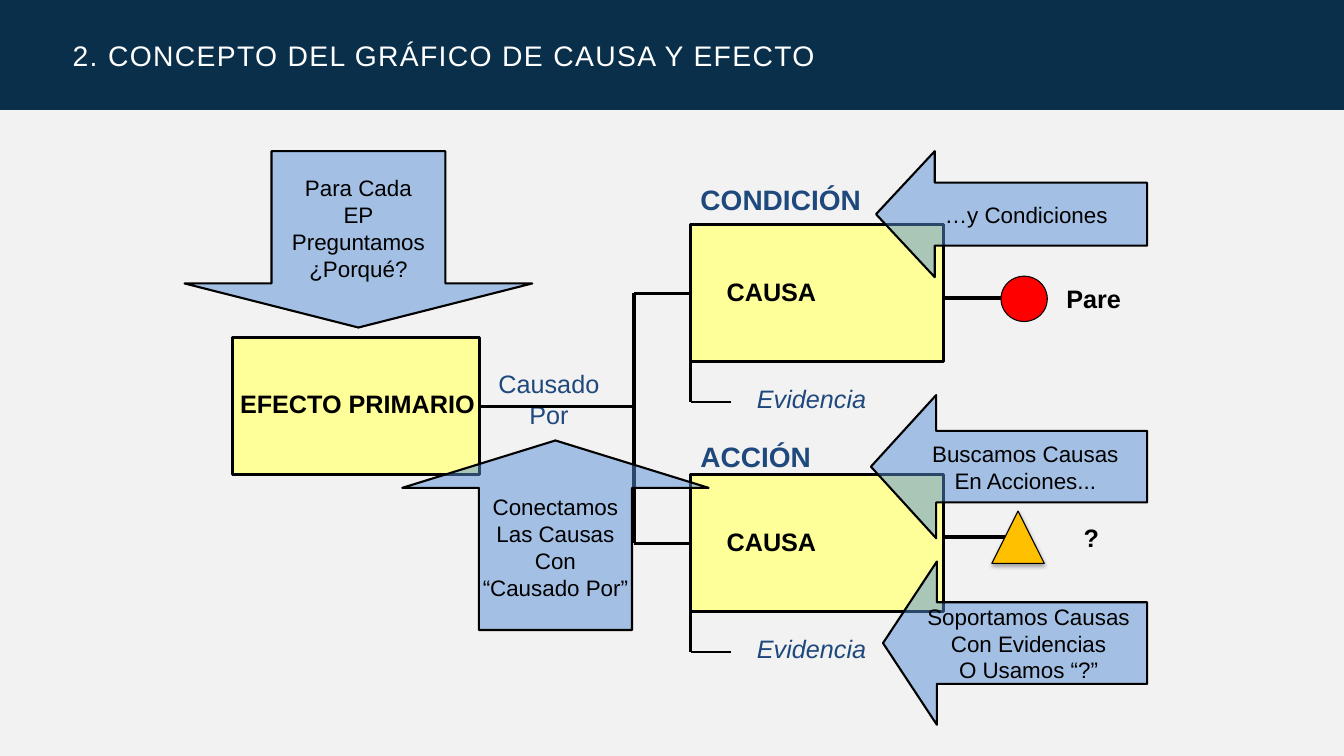
from lxml import etree
from pptx import Presentation, util as u
from pptx.dml.color import RGBColor
from pptx.enum import shapes, text
from pptx.oxml import ns, parse_xml

WIDTH, HEIGHT = u.Inches(13.333), u.Inches(7.5)
NAVY, BLUE, SKY, YELLOW, BLACK = "092F4A", "1F497D", "558ED5", "FFFF99", "000000"

# Horizontal and vertical positions are percentages of the slide's size
CAUSE_LEFT, CAUSE_WIDTH, BOX_HEIGHT = 51.38, 18.83, 18.13
EFFECT = (17.33, 44.67, 18.38, BOX_HEIGHT)
TRUNK_X, LEG = 47.18, 5.33
LINE_HEIGHT = 5.33
ARROW_RIGHT = 85.35

LABEL = {"size": u.Pt(18), "bold": True}
HEADING = {"size": u.Pt(20), "bold": True}
RELATION = {"size": u.Pt(18)}
EVIDENCE = {"size": u.Pt(18), "italic": True}
CALLOUT = {"size": u.Pt(16)}

MSO, ALIGN = shapes.MSO_SHAPE, text.PP_ALIGN


def across(share):
    return round(WIDTH * share / 100)


def down(share):
    return round(HEIGHT * share / 100)


def frame(left, top, width, height):
    return across(left), down(top), across(width), down(height)


def paint(target, colour):
    """Set a fill, line or font colour from a hex string."""
    if hasattr(target, "solid"):
        target.solid()
        target = target.fore_color
    else:
        target = target.color
    target.rgb = RGBColor.from_string(colour)


def write(body, lines, formats, colour=BLACK, align=ALIGN.LEFT):
    for number, line in enumerate(lines):
        paragraph = body.add_paragraph() if number else body.paragraphs[0]
        paragraph.alignment = align
        run = paragraph.add_run()
        run.text = line
        for key, value in {"name": "Arial", **formats}.items():
            setattr(run.font, key, value)
        paint(run.font, colour)


def add_label(slide, wording, box, formats, colour=BLACK, align=ALIGN.LEFT):
    body = slide.shapes.add_textbox(*frame(*box)).text_frame
    body.word_wrap = True
    body.auto_size = text.MSO_AUTO_SIZE.SHAPE_TO_FIT_TEXT
    write(body, [wording], formats, colour, align)


def add_figure(slide, preset, box, fill, weight):
    figure = slide.shapes.add_shape(preset, *frame(*box))
    figure.shadow.inherit = False
    paint(figure.fill, fill)
    if weight:
        paint(figure.line, BLACK)
        figure.line.width = u.Pt(weight)
    else:
        figure.line.fill.background()
    return figure


def add_line(slide, x1, y1, x2, y2, weight):
    line = slide.shapes.add_connector(
        shapes.MSO_CONNECTOR.STRAIGHT, across(x1), down(y1), across(x2), down(y2))
    paint(line.line, BLACK)
    line.line.width = u.Pt(weight)
    etree.SubElement(line._element.spPr, ns.qn("a:effectLst"))
    return line


def add_callout(slide, preset, box, head, lines):
    """Half-transparent block arrow with centred lines of text."""
    arrow = add_figure(slide, preset, box, SKY, 1.5)
    arrow.adjustments[0], arrow.adjustments[1] = 0.5, head
    colour = arrow._element.spPr.find(ns.qn("a:solidFill"))[0]
    etree.SubElement(colour, ns.qn("a:alpha"), val="50000")
    body = arrow.text_frame
    body.word_wrap = False
    body.vertical_anchor = text.MSO_ANCHOR.MIDDLE
    write(body, lines, CALLOUT, align=ALIGN.CENTER)


def add_title(slide, wording):
    band = add_figure(slide, MSO.RECTANGLE, (0, 0, 100, 14.53), NAVY, 0)
    slide.shapes._spTree.insert(2, band._element)
    title = slide.shapes.title
    title.left, title.top, title.width, title.height = frame(4.43, 0, 91.05, 14.67)
    body = title.text_frame
    formats = {"margin_left": u.Inches(0.13), "margin_right": u.Inches(0.13),
               "margin_top": u.Inches(0.07), "margin_bottom": u.Inches(0.07),
               "vertical_anchor": text.MSO_ANCHOR.MIDDLE, "word_wrap": True}
    for key, value in formats.items():
        setattr(body, key, value)
    write(body, [wording], {"size": u.Pt(20.2)}, "FFFFFF")
    body.paragraphs[0].runs[0].font._element.set("spc", "100")


def add_effect(slide):
    left, top, width, height = EFFECT
    middle = top + height / 2
    add_label(slide, "Causado Por", (36.15, 48.13, 9.38, 9.47),
              RELATION, BLUE, ALIGN.CENTER)
    effect = add_figure(slide, MSO.RECTANGLE, EFFECT, YELLOW, 2.25)
    add_label(slide, "EFECTO PRIMARIO", (16.58, 50.67, 20.03, LINE_HEIGHT),
              LABEL, align=ALIGN.CENTER)
    trunk = add_line(slide, left + width, middle, TRUNK_X, middle, 2.25)
    trunk.begin_connect(effect, 3)


def add_cause(slide, heading, heading_top, top):
    """Cause box with its heading, branch line and evidence leg."""
    middle, bottom = top + BOX_HEIGHT / 2, top + BOX_HEIGHT
    add_label(slide, heading, (CAUSE_LEFT, heading_top, 20, 5.8), HEADING, BLUE)
    cause = add_figure(slide, MSO.RECTANGLE,
                       (CAUSE_LEFT, top, CAUSE_WIDTH, BOX_HEIGHT), YELLOW, 2.25)
    add_label(slide, "CAUSA", (53.33, top + 6.2, 15, LINE_HEIGHT), LABEL)
    branch = add_line(slide, TRUNK_X, middle, CAUSE_LEFT, middle, 2.25)
    branch.end_connect(cause, 1)
    add_line(slide, CAUSE_LEFT, bottom, CAUSE_LEFT, bottom + LEG, 1.5)
    add_line(slide, CAUSE_LEFT, bottom + LEG, CAUSE_LEFT + 3, bottom + LEG, 1.5)
    add_label(slide, "Evidencia", (55.58, top + 20.27, 15, LINE_HEIGHT),
              EVIDENCE, BLUE)
    return middle


def add_marker(slide, preset, box, fill, line_from, line_to, line_y):
    """Closing symbol at the end of a cause's path."""
    add_line(slide, line_from, line_y, line_to, line_y, 3)
    return add_figure(slide, preset, box, fill, 0.75)


def add_soft_shadow(figure):
    effects = figure._element.spPr.find(ns.qn("a:effectLst"))
    effects.append(parse_xml(
        f'<a:outerShdw {ns.nsdecls("a")} blurRad="39370" dist="22860" dir="5400000"'
        ' rotWithShape="0"><a:srgbClr val="000000"><a:alpha val="35000"/>'
        '</a:srgbClr></a:outerShdw>'))


def main():
    deck = Presentation()
    deck.slide_width, deck.slide_height = WIDTH, HEIGHT
    slide = deck.slides.add_slide(deck.slide_layouts[5])
    paint(slide.background.fill, "F2F2F2")
    add_title(slide, "2. CONCEPTO DEL GRÁFICO DE CAUSA Y EFECTO")

    # Effect and its two causes
    add_effect(slide)
    condition_y = add_cause(slide, "CONDICIÓN", 23.47, 29.73)
    action_y = add_cause(slide, "ACCIÓN", 57.47, 62.8)
    add_line(slide, TRUNK_X, condition_y, TRUNK_X, action_y, 2.25)

    # Explanatory arrows
    add_callout(slide, MSO.DOWN_ARROW, (13.73, 20, 25.88, 23.33), 0.25,
                ["Para Cada", "EP", "Preguntamos", "¿Porqué?"])
    add_callout(slide, MSO.UP_ARROW, (29.93, 58.27, 22.8, 25.07), 0.25,
                ["Conectamos", "Las Causas", "Con", "“Causado Por”"])
    for left, top, height, head, lines in (
            (64.8, 52.27, 18.93, 0.456, ["Buscamos Causas", "En Acciones..."]),
            (65.18, 20, 16.67, 0.466, ["…y Condiciones"]),
            (65.7, 74.27, 21.6, 0.33,
             ["Soportamos Causas", "Con Evidencias", "O Usamos “?”"])):
        add_callout(slide, MSO.LEFT_ARROW,
                    (left, top, ARROW_RIGHT - left, height), head, lines)

    # Closing symbols
    cause_right = CAUSE_LEFT + CAUSE_WIDTH
    add_marker(slide, MSO.OVAL, (74.48, 36.53, 3.45, 6), "FF0000",
               cause_right, 74.48, 39.47)
    add_label(slide, "Pare", (78.6, 36.8, 5.85, LINE_HEIGHT), LABEL)
    doubt = add_marker(slide, MSO.ISOSCELES_TRIANGLE, (73.8, 67.6, 3.9, 6.93),
                       "FFC000", cause_right, 75, 71.07)
    add_soft_shadow(doubt)
    add_label(slide, "?", (79.88, 68.4, 3.08, LINE_HEIGHT), LABEL)

    deck.save("out.pptx")


if __name__ == "__main__":
    main()
